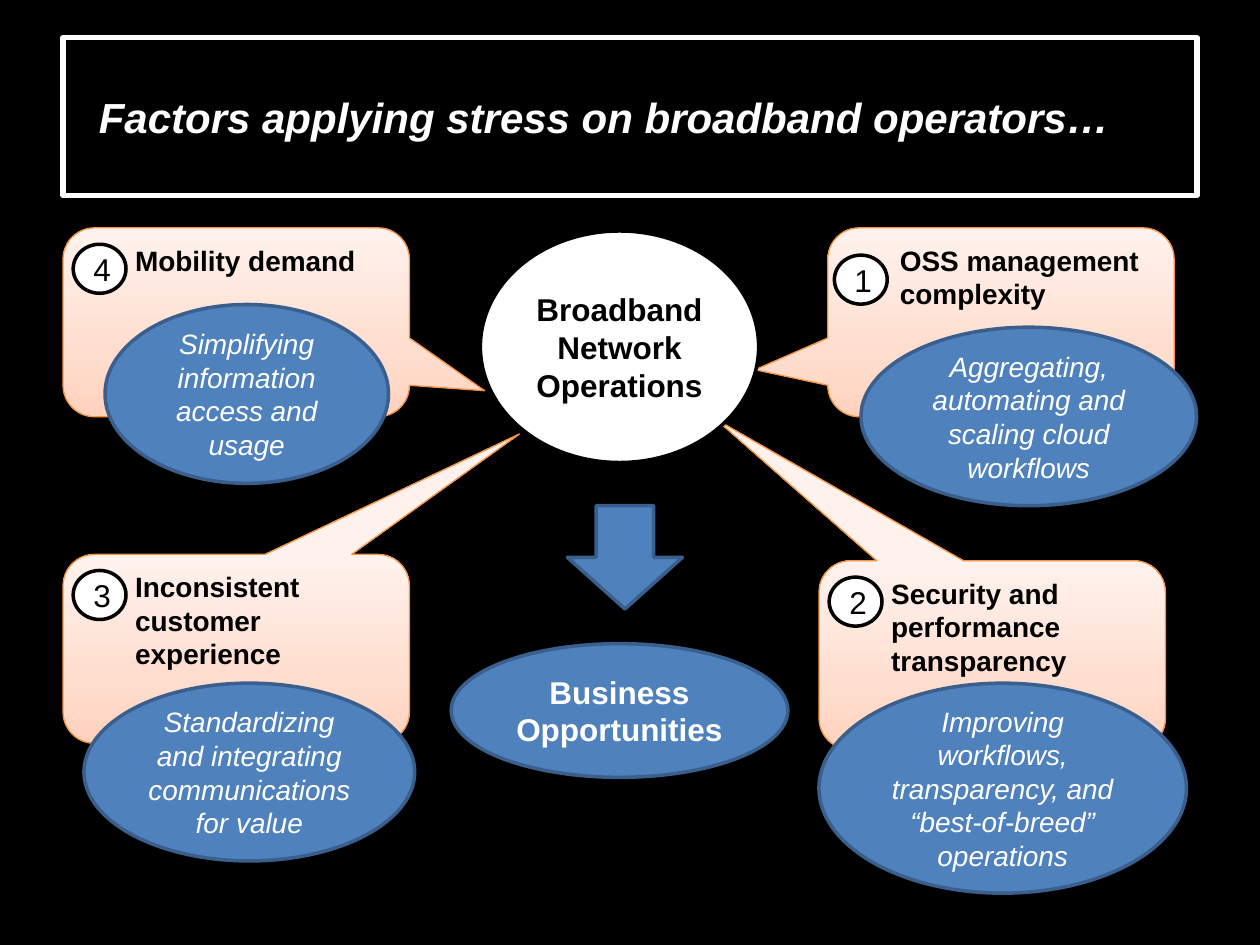
"""Build a slide on the factors that stress broadband operators."""
from copy import deepcopy

from pptx import Presentation
from pptx.dml.color import RGBColor
from pptx.enum.shapes import MSO_SHAPE as SHAPE
from pptx.enum.text import MSO_ANCHOR as ANCHOR, PP_ALIGN as ALIGN
from pptx.oxml.ns import qn
from pptx.util import Pt

BLACK = RGBColor(0x00, 0x00, 0x00)
WHITE = RGBColor(0xFF, 0xFF, 0xFF)
BLUE = RGBColor(0x4F, 0x81, 0xBD)
NAVY = RGBColor(0x3A, 0x5F, 0x8C)
ORANGE = RGBColor(0xF6, 0x92, 0x40)
PEACH = RGBColor(0xFF, 0xD2, 0xBD)
PALE_PEACH = RGBColor(0xFF, 0xDE, 0xD0)
CREAM = RGBColor(0xFF, 0xF2, 0xED)


def add(kind, box, fill=BLUE, line=NAVY, weight=2):
    s = slide.shapes.add_shape(kind, *[Pt(v) for v in box])
    s.shadow.inherit = False
    s.fill.solid()
    s.fill.fore_color.rgb = fill
    s.line.color.rgb = line
    s.line.width = Pt(weight)
    return s


def write(s, text, size=18, color=BLACK, bold=False, italic=False,
          align=ALIGN.CENTER, anchor=ANCHOR.MIDDLE, left=7.2):
    tf = s.text_frame
    tf.word_wrap = True
    tf.vertical_anchor = anchor
    tf.margin_left = Pt(left)
    p = tf.paragraphs[0]
    p.alignment = align
    r = p.add_run()
    r.text = text
    r.font.name = "Arial"
    r.font.size = Pt(size)
    r.font.color.rgb = color
    r.font.bold = bold
    r.font.italic = italic


prs = Presentation()
prs.slide_width, prs.slide_height = Pt(720), Pt(540)
slide = prs.slides.add_slide(prs.slide_layouts[6])
slide.background.fill.solid()
slide.background.fill.fore_color.rgb = BLACK

factors = [
    ("4", "Mobility demand", (36, 130.2), (0.717, 0.362), (41.8, 139.6)),
    ("3", "Inconsistent customer experience", (36, 316.8), (0.817, -1.137), (41.8, 326)),
    ("2", "Security and performance transparency", (468, 320.4), (-0.797, -1.247), (473.8, 329.8)),
    ("1", "OSS management complexity", (473, 130.2), (-0.71, 0.251), (476.8, 145.8)),
]
for number, factor, corner, tip, badge in factors:
    s = add(SHAPE.ROUNDED_RECTANGULAR_CALLOUT, (*corner, 198, 108), line=ORANGE, weight=0.75)
    s.adjustments[0], s.adjustments[1] = tip
    s.fill.gradient()
    s.fill.gradient_angle = 90
    stops = s.fill.gradient_stops
    stops[0].color.rgb, stops[0].position = PEACH, 0
    stops[1].color.rgb, stops[1].position = CREAM, 1
    first = next(s._element.spPr.iter(qn("a:gs")))
    first.addnext(deepcopy(first))
    middle = s.fill.gradient_stops[1]
    middle.color.rgb, middle.position = PALE_PEACH, 0.35
    write(s, factor, size=16, bold=True, align=ALIGN.LEFT, anchor=ANCHOR.TOP, left=36)
    s = add(SHAPE.OVAL, (*badge, 30.2, 28), WHITE, BLACK)
    write(s, number)

s = add(SHAPE.RECTANGLE, (36, 21.6, 648, 90), BLACK, WHITE, 3)
write(s, "Factors applying stress on broadband operators…", size=24, color=WHITE,
      bold=True, italic=True, align=ALIGN.LEFT, left=20.5)

s = add(SHAPE.OVAL, (274.5, 132, 159, 132.3), WHITE, BLACK)
write(s, "Broadband Network Operations", bold=True)

s = add(SHAPE.RIGHT_ARROW, (327.6, 285.6, 59, 65.8))
s.rotation = 90

s = add(SHAPE.OVAL, (257.8, 367.8, 192.4, 76.4))
write(s, "Business Opportunities", color=WHITE, bold=True)

responses = [
    ("Simplifying information access and usage", (60, 174, 162, 102.2)),
    ("Standardizing and integrating communications for value", (48, 390.4, 189, 101.6)),
    ("Aggregating, automating and scaling cloud workflows", (492, 187, 191.8, 102)),
    ("Improving workflows, transparency, and “best-of-breed” operations", (468, 390.4, 210, 120)),
]
for response, box in responses:
    s = add(SHAPE.OVAL, box)
    write(s, response, size=16, color=WHITE, italic=True)

prs.save("out.pptx")
